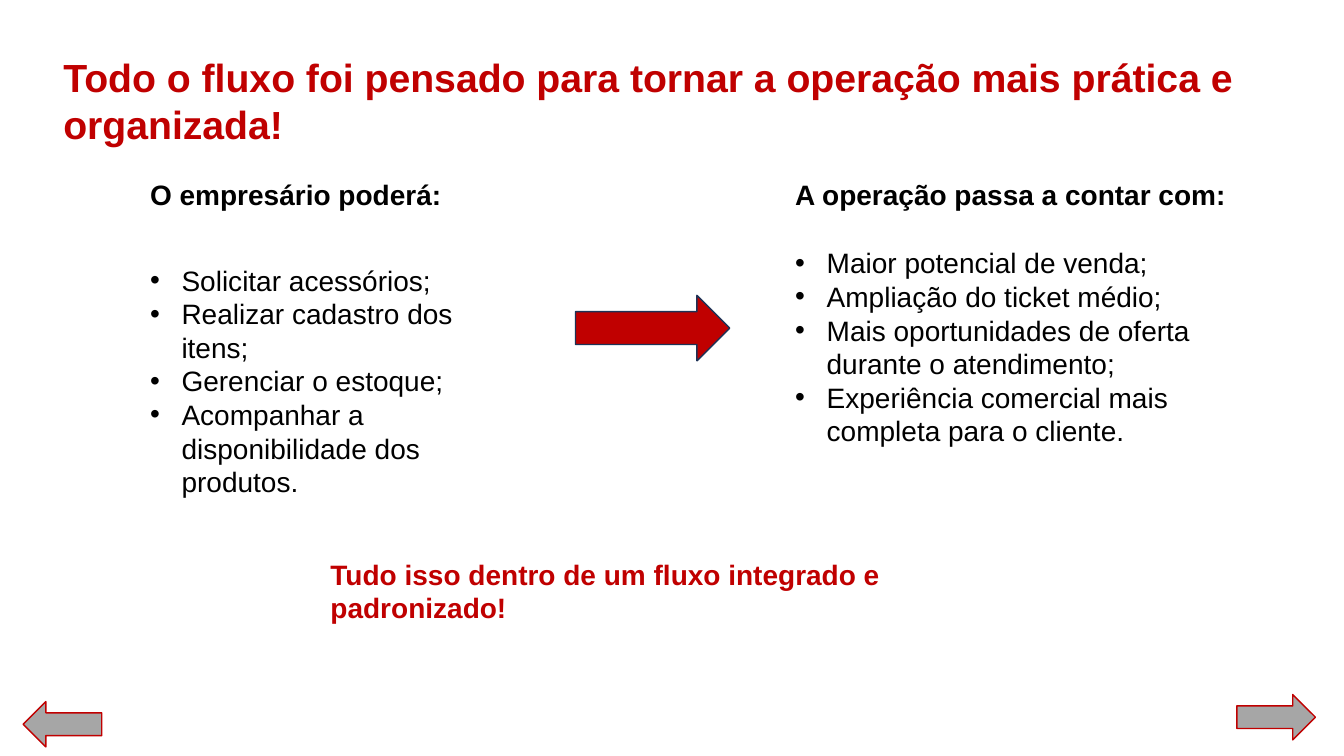
"""Builds the slide on the integrated flow: what the owner can do and what the operation gains."""
from dataclasses import dataclass

from lxml import etree
from pptx import Presentation
from pptx.dml.color import RGBColor
from pptx.enum.shapes import MSO_SHAPE
from pptx.enum.text import MSO_AUTO_SIZE
from pptx.oxml.ns import qn
from pptx.slide import Slide
from pptx.util import Pt

RIGHT_ARROW = MSO_SHAPE.RIGHT_ARROW
LEFT_ARROW = MSO_SHAPE.LEFT_ARROW
FIT_TO_TEXT = MSO_AUTO_SIZE.SHAPE_TO_FIT_TEXT

COLORS = {"red": "C00000", "black": "000000", "gray": "A6A6A6", "navy": "1E3256"}
BULLET_INDENT = 22.5
OWNER_LEFT = 100.08
OPERATION_LEFT = 560.88
HEADING_TOP = 123.12


@dataclass(frozen=True)
class TextBlock:
    left: float
    top: float
    width: float
    height: float
    lines: tuple[str, ...]
    color: str = "black"
    size: float = 20
    bold: bool = True
    bulleted: bool = False


@dataclass(frozen=True)
class Arrow:
    direction: MSO_SHAPE
    left: float
    top: float
    width: float
    height: float
    fill: str
    line: str


TEXT_BLOCKS = (
    TextBlock(OWNER_LEFT, 184.32, 282.96, 128.16, (
        "Solicitar acessórios;",
        "Realizar cadastro dos itens;",
        "Gerenciar o estoque;",
        "Acompanhar a disponibilidade dos produtos.",
    ), bold=False, bulleted=True),
    TextBlock(38.16, 34.56, 884.16, 41.04, (
        "Todo o fluxo foi pensado para tornar a operação mais prática e organizada!",
    ), color="red", size=28),
    TextBlock(OWNER_LEFT, HEADING_TOP, 243.36, 31.68, ("O empresário poderá:",)),
    TextBlock(228.96, 394.56, 473.76, 31.68, (
        "Tudo isso dentro de um fluxo integrado e padronizado!",
    ), color="red"),
    TextBlock(OPERATION_LEFT, 172.08, 324.72, 152.64, (
        "Maior potencial de venda;",
        "Ampliação do ticket médio;",
        "Mais oportunidades de oferta durante o atendimento;",
        "Experiência comercial mais completa para o cliente.",
    ), bold=False, bulleted=True),
    TextBlock(OPERATION_LEFT, HEADING_TOP, 332.64, 31.68, ("A operação passa a contar com:",)),
)

ARROWS = (
    Arrow(RIGHT_ARROW, 411.12, 210.96, 110.16, 46.8, "red", "navy"),
    Arrow(LEFT_ARROW, 16.56, 501.12, 56.16, 32.4, "gray", "red"),
    Arrow(RIGHT_ARROW, 883.44, 496.08, 56.16, 32.4, "gray", "red"),
)


def rgb(color: str) -> RGBColor:
    return RGBColor.from_string(COLORS[color])


def add_bullet(paragraph) -> None:
    properties = paragraph._p.get_or_add_pPr()
    properties.set("marL", str(Pt(BULLET_INDENT)))
    properties.set("indent", str(-Pt(BULLET_INDENT)))
    etree.SubElement(properties, qn("a:buFont"), typeface="Arial")
    etree.SubElement(properties, qn("a:buChar"), char="•")


def draw_text(slide: Slide, block: TextBlock) -> None:
    box = slide.shapes.add_textbox(
        Pt(block.left), Pt(block.top), Pt(block.width), Pt(block.height))
    frame = box.text_frame
    frame.word_wrap = True
    frame.auto_size = FIT_TO_TEXT
    frame.text = "\n".join(block.lines)
    font_format = {"name": "Arial", "size": Pt(block.size), "bold": block.bold}
    for paragraph in frame.paragraphs:
        if block.bulleted:
            add_bullet(paragraph)
        for run in paragraph.runs:
            for attribute, value in font_format.items():
                setattr(run.font, attribute, value)
            run.font.color.rgb = rgb(block.color)


def draw_arrow(slide: Slide, arrow: Arrow) -> None:
    shape = slide.shapes.add_shape(
        arrow.direction, Pt(arrow.left), Pt(arrow.top), Pt(arrow.width), Pt(arrow.height))
    shape.shadow.inherit = False
    shape.fill.solid()
    shape.fill.fore_color.rgb = rgb(arrow.fill)
    shape.line.color.rgb = rgb(arrow.line)
    shape.line.width = Pt(1)


def main() -> None:
    presentation = Presentation()
    presentation.slide_width = Pt(960)
    presentation.slide_height = Pt(540)
    slide = presentation.slides.add_slide(presentation.slide_layouts[6])
    for block in TEXT_BLOCKS:
        draw_text(slide, block)
    for arrow in ARROWS:
        draw_arrow(slide, arrow)
    presentation.save("out.pptx")


if __name__ == "__main__":
    main()
